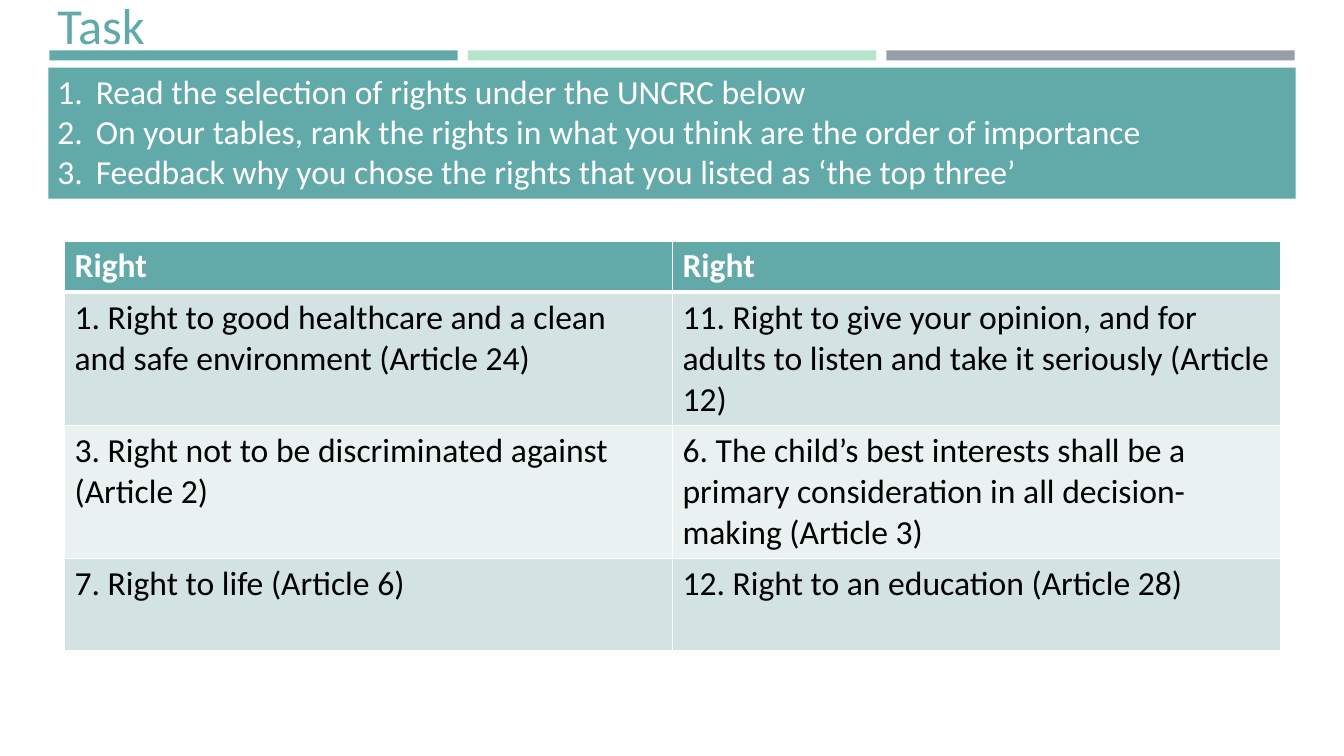
import pptx
import pptx.util
import pptx.dml.color
import pptx.enum.shapes
import pptx.enum.text
import pptx.oxml.ns
import lxml.etree

Inches = pptx.util.Inches
Pt = pptx.util.Pt
HUES = {
    "teal": "62A9AA", "mint": "B7E5CB", "grey": "969FA7", "white": "FFFFFF",
    "black": "000000", "dark": "D3E2E2", "light": "EAF1F1",
}
STEPS = [
    "Read the selection of rights under the UNCRC below",
    "On your tables, rank the rights in what you think are the order of importance",
    "Feedback why you chose the rights that you listed as ‘the top three’",
]
RIGHTS = [
    ("Right", "Right"),
    ("1. Right to good healthcare and a clean and safe environment (Article 24)",
     "11. Right to give your opinion, and for adults to listen and take it seriously (Article 12)"),
    ("3. Right not to be discriminated against (Article 2)",
     "6. The child’s best interests shall be a primary consideration in all decision-making (Article 3)"),
    ("7. Right to life (Article 6)", "12. Right to an education (Article 28)"),
]
HEIGHTS = [0.51, 1.32, 1.32, 0.91]


def color(name):
    return pptx.dml.color.RGBColor.from_string(HUES[name])


def add(parent, tag, **attrs):
    return lxml.etree.SubElement(parent, pptx.oxml.ns.qn(tag), **attrs)


class Page:
    font = "Calibri"

    def __init__(self, deck):
        self.slide = deck.slides.add_slide(deck.slide_layouts[1])
        self.shapes = self.slide.shapes

    def bar(self, hue, *box):
        """Draw a plain block behind the placeholders."""
        shape = self.shapes.add_shape(
            pptx.enum.shapes.MSO_SHAPE.RECTANGLE, *map(Inches, box))
        shape.shadow.inherit = False
        shape.fill.solid()
        shape.fill.fore_color.rgb = color(hue)
        shape.line.fill.background()
        shape._element.getparent().insert(2, shape._element)

    def text(self, para, words, size, hue, bold=False):
        para.alignment = pptx.enum.text.PP_ALIGN.LEFT
        run = para.add_run()
        run.text = words
        run.font.name = self.font
        run.font.size = Pt(size)
        run.font.bold = bold
        run.font.color.rgb = color(hue)

    def place(self, holder, *box):
        holder.left, holder.top, holder.width, holder.height = map(Inches, box)
        frame = holder.text_frame
        frame.word_wrap = True
        frame.auto_size = pptx.enum.text.MSO_AUTO_SIZE.NONE
        frame.vertical_anchor = pptx.enum.text.MSO_ANCHOR.TOP
        return frame

    def title(self, words, *box):
        frame = self.place(self.shapes.title, *box)
        self.text(frame.paragraphs[0], words, 36, "teal")

    def steps(self, lines, *box):
        frame = self.place(self.slide.placeholders[1], *box)
        for i, line in enumerate(lines):
            para = frame.add_paragraph() if i else frame.paragraphs[0]
            self.text(para, line, 24, "white")
            para.space_before = Pt(0)
            props = para._p.get_or_add_pPr()
            props.set("marL", str(Inches(0.38)))
            props.set("indent", str(-Inches(0.38)))
            add(props, "a:buFont", typeface=self.font)
            add(props, "a:buAutoNum", type="arabicPeriod")

    def edge(self, cell, head):
        props = cell._tc.get_or_add_tcPr()
        for side in "LRTB":
            width = Pt(3 if head and side == "B" else 1)
            line = add(props, "a:ln" + side, w=str(width))
            add(add(line, "a:solidFill"), "a:srgbClr", val=HUES["white"])

    def table(self, rows, heights, *box):
        grid = self.shapes.add_table(
            len(rows), len(rows[0]), *map(Inches, box)).table
        for r, row in enumerate(rows):
            grid.rows[r].height = Inches(heights[r])
            head = r == 0
            fill = "teal" if head else "dark" if r % 2 else "light"
            for c, words in enumerate(row):
                cell = grid.cell(r, c)
                self.edge(cell, head)
                cell.fill.solid()
                cell.fill.fore_color.rgb = color(fill)
                self.text(cell.text_frame.paragraphs[0], words, 24,
                          "white" if head else "black", head)


def main():
    deck = pptx.Presentation()
    deck.slide_width = Inches(13.33)
    deck.slide_height = Inches(7.5)
    page = Page(deck)
    for i, hue in enumerate(["teal", "mint", "grey"]):
        page.bar(hue, 0.49 + 4.15 * i, 0.5, 4.05, 0.1)
    page.bar("teal", 0.48, 0.67, 12.37, 1.3)
    page.title("Task", 0.47, -0.11, 7.8, 0.71)
    page.steps(STEPS, 0.47, 0.65, 11.67, 1.31)
    page.table(RIGHTS, HEIGHTS, 0.64, 2.39, 12.06, sum(HEIGHTS))
    deck.save("out.pptx")


if __name__ == "__main__":
    main()
